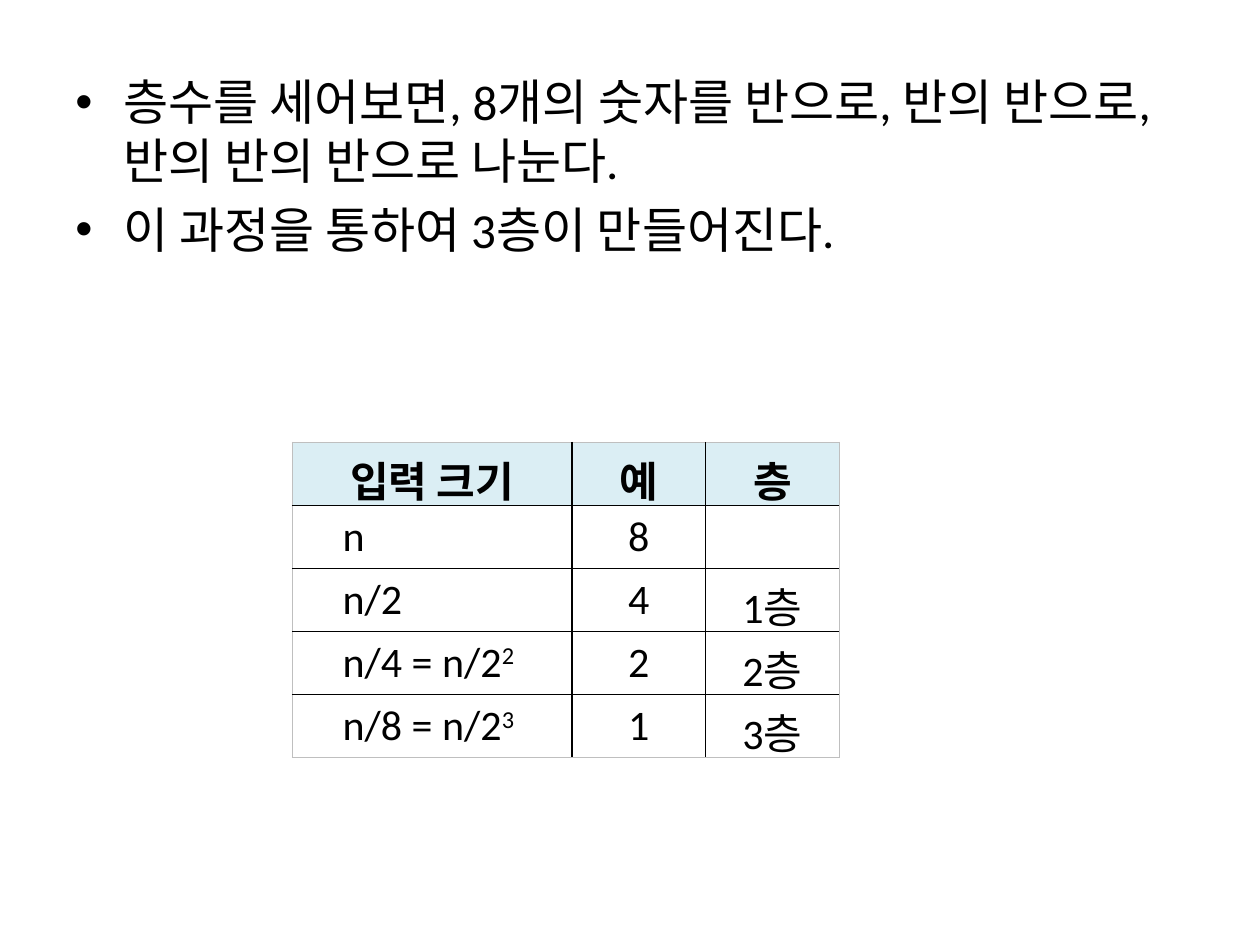
from dataclasses import dataclass

from lxml.etree import SubElement
from pptx import Presentation
from pptx.dml.color import RGBColor
from pptx.enum.text import PP_ALIGN as Align, MSO_ANCHOR as Anchor
from pptx.oxml.ns import qn
from pptx.util import Inches, Pt

COLORS = {"text": "000000", "header": "DBEEF4", "grid": "000000", "edge": "BFBFBF"}
LATIN, KOREAN = "Calibri", "Noto Sans CJK KR"
COL_WIDTHS = (2.22, 1.06, 1.06)
BULLETS = (
    "층수를 세어보면, 8개의 숫자를 반으로, 반의 반으로, 반의 반의 반으로 나눈다.",
    "이 과정을 통하여 3층이 만들어진다.",
)


@dataclass
class Level:
    size: str
    example: str
    layer: str = ""
    power: str = ""


LEVELS = (
    Level("n", "8"),
    Level("n/2", "4", "1층"),
    Level("n/4 = n/2", "2", "2층", "2"),
    Level("n/8 = n/2", "1", "3층", "3"),
)


def style_run(r, size: int, bold: bool = False) -> None:
    r.font.size = Pt(size)
    r.font.bold = bold
    r.font.name = LATIN
    r.font.color.rgb = RGBColor.from_string(COLORS["text"])
    SubElement(r._r.get_or_add_rPr(), qn("a:ea"), typeface=KOREAN)


def add_bullets(s, texts: tuple[str, ...]) -> None:
    tf = s.shapes.add_textbox(Inches(0.5), Inches(0.52), Inches(9), Inches(2.2)).text_frame
    tf.word_wrap = True
    for i, text in enumerate(texts):
        p = tf.paragraphs[0] if i == 0 else tf.add_paragraph()
        p.text = text
        style_run(p.runs[0], 28)
        pPr = p._p.get_or_add_pPr()
        pPr.set("marL", str(Inches(0.38)))
        pPr.set("indent", str(Inches(-0.38)))
        before = SubElement(pPr, qn("a:spcBef"))
        SubElement(before, qn("a:spcPct"), val="20000")
        SubElement(pPr, qn("a:buFont"), typeface="Arial")
        SubElement(pPr, qn("a:buChar"), char="•")


def set_borders(cell, outer: dict[str, bool]) -> None:
    tcPr = cell._tc.get_or_add_tcPr()
    for i, (side, is_outer) in enumerate(outer.items()):
        ln = tcPr.makeelement(qn(f"a:ln{side}"), {"w": str(Pt(0.5 if is_outer else 1))})
        fill = SubElement(ln, qn("a:solidFill"))
        SubElement(fill, qn("a:srgbClr"), val=COLORS["edge" if is_outer else "grid"])
        tcPr.insert(i, ln)


def fill_cell(cell, text: str, align: Align, bold: bool = False, power: str = "") -> None:
    cell.vertical_anchor = Anchor.TOP
    p = cell.text_frame.paragraphs[0]
    p.alignment = align
    if text:
        p.text = text
        style_run(p.runs[0], 24, bold)
    if power:
        r = p.add_run()
        r.text = power
        style_run(r, 24)
        r.font._element.set("baseline", "30000")


def add_level_table(s, levels: tuple[Level, ...]) -> None:
    rows, cols = len(levels) + 1, len(COL_WIDTHS)
    table = s.shapes.add_table(
        rows, cols, Inches(2.32), Inches(3.51), Inches(sum(COL_WIDTHS)), Inches(2.5)
    ).table
    table.horz_banding = False
    for col, width in zip(table.columns, COL_WIDTHS):
        col.width = Inches(width)
    for c, title in enumerate(("입력 크기", "예", "층")):
        fill_cell(table.cell(0, c), title, Align.CENTER, bold=True)
    for i, level in enumerate(levels, 1):
        size_cell = table.cell(i, 0)
        size_cell.margin_left = Inches(0.4)
        fill_cell(size_cell, level.size, Align.LEFT, power=level.power)
        fill_cell(table.cell(i, 1), level.example, Align.CENTER)
        fill_cell(table.cell(i, 2), level.layer, Align.CENTER)
    for i in range(rows):
        for c in range(cols):
            cell = table.cell(i, c)
            if i == 0:
                cell.fill.solid()
                cell.fill.fore_color.rgb = RGBColor.from_string(COLORS["header"])
            else:
                cell.fill.background()
            set_borders(cell, {"L": c == 0, "R": c == cols - 1, "T": i == 0, "B": i == rows - 1})


def main() -> None:
    """Build the slide on input size, example and layer of repeated halving."""
    prs = Presentation()
    prs.slide_width, prs.slide_height = Inches(10), Inches(7.5)
    s = prs.slides.add_slide(prs.slide_layouts[6])
    add_bullets(s, BULLETS)
    add_level_table(s, LEVELS)
    prs.save("out.pptx")


if __name__ == "__main__":
    main()
